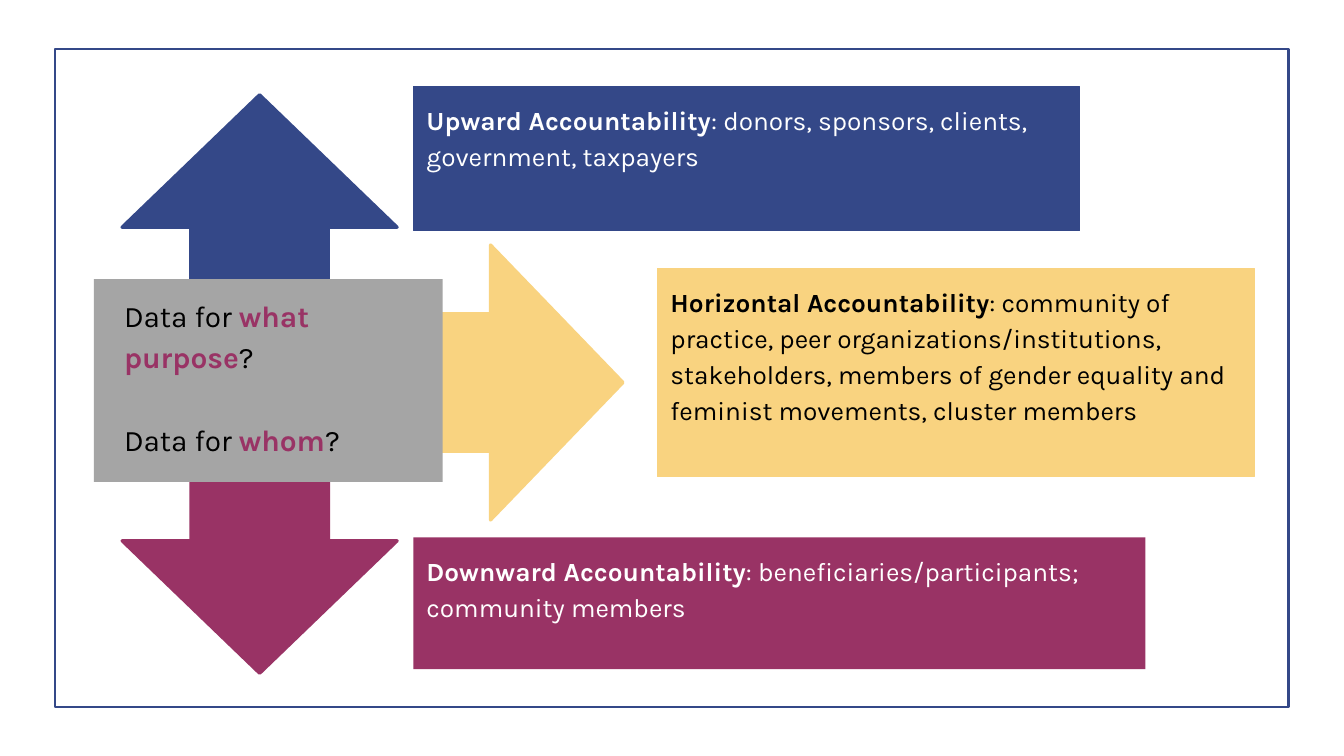
"""Build the slide on upward, horizontal and downward accountability."""
from lxml import etree
from pptx import Presentation
from pptx.dml.color import RGBColor
from pptx.enum import shapes, text
from pptx.oxml import ns
from pptx.util import Inches, Pt

BLUE = RGBColor(0x34, 0x48, 0x88)
YELLOW = RGBColor(0xF9, 0xD3, 0x80)
PLUM = RGBColor(0x99, 0x33, 0x65)
GREY = RGBColor(0xA5, 0xA5, 0xA5)
WHITE = RGBColor(0xFF, 0xFF, 0xFF)
BLACK = RGBColor(0, 0, 0)

FONT = "Karla"
ARROW_SIZE = (2.73, 2.63)
FRAME = (0.55, 0.49, 12.23, 6.52)
QUESTION_BOX = (0.93, 2.77, 3.46, 2.01)

DIRECTIONS = [
    {"name": "Upward Accountability",
     "audience": ": donors, sponsors, clients, government, taxpayers",
     "box": (4.1, 0.86, 6.61, 1.43), "edge": 0.75, "fill": BLUE, "ink": WHITE,
     "arrow_at": (1.21, 0.94), "turn": 0},
    {"name": "Horizontal Accountability",
     "audience": ": community of practice, peer organizations/institutions, "
                 "stakeholders, members of gender equality and feminist "
                 "movements, cluster members",
     "box": (6.52, 2.66, 5.92, 2.07), "edge": 0.75, "fill": YELLOW, "ink": BLACK,
     "arrow_at": (3.5, 2.48), "turn": 90},
    {"name": "Downward Accountability",
     "audience": ": beneficiaries/participants; community members",
     "box": (4.1, 5.33, 7.26, 1.31), "edge": 0, "fill": PLUM, "ink": WHITE,
     "arrow_at": (1.21, 4.05), "turn": 180},
]
QUESTIONS = [("Data for ", "what purpose", "?"), ("Data for ", "whom", "?")]

FRAME_FORMAT = {
    "word_wrap": True,
    "auto_size": text.MSO_AUTO_SIZE.NONE,
    "vertical_anchor": text.MSO_ANCHOR.TOP,
    **{f"margin_{side}": Inches(0.13) for side in ("left", "top", "right", "bottom")},
}


def apply(target, values):
    for key, value in values.items():
        setattr(target, key, value)


def add_block(slide, kind, place, fill=None, edge_color=None, edge=0):
    block = slide.shapes.add_shape(kind, *map(Inches, place))
    block.shadow.inherit = False
    if fill is None:
        block.fill.background()
    else:
        block.fill.solid()
        block.fill.fore_color.rgb = fill
    if edge:
        block.line.color.rgb = edge_color
        block.line.width = Pt(edge)
    else:
        block.line.fill.background()
    return block


def write(paragraph, runs, size, before, after):
    apply(paragraph, {"alignment": text.PP_ALIGN.LEFT, "line_spacing": 1.15,
                      "space_before": Pt(before), "space_after": Pt(after)})
    for words, color, bold in runs:
        run = paragraph.add_run()
        run.text = words
        apply(run.font, {"name": FONT, "size": Pt(size), "bold": bold})
        run.font.color.rgb = color


def add_directions(slide):
    for way in DIRECTIONS:
        box = add_block(slide, shapes.MSO_SHAPE.RECTANGLE, way["box"],
                        way["fill"], way["fill"], way["edge"])
        apply(box.text_frame, FRAME_FORMAT)
        runs = [(way["name"], way["ink"], True), (way["audience"], way["ink"], False)]
        write(box.text_frame.paragraphs[0], runs, 18.7, 16, 16)
    for way in DIRECTIONS:
        arrow = add_block(slide, shapes.MSO_SHAPE.UP_ARROW,
                          way["arrow_at"] + ARROW_SIZE, way["fill"], way["fill"], 2.25)
        arrow.rotation = way["turn"]


def fill_questions(slide, questions):
    slide.shapes._spTree.append(questions._element)
    apply(questions, dict(zip(("left", "top", "width", "height"),
                              map(Inches, QUESTION_BOX))))
    questions.fill.solid()
    questions.fill.fore_color.rgb = GREY
    frame = questions.text_frame
    apply(frame, FRAME_FORMAT)
    for number, (lead, key, mark) in enumerate(QUESTIONS):
        paragraph = frame.add_paragraph() if number else frame.paragraphs[0]
        runs = [(lead, BLACK, False), (key, PLUM, True), (mark, BLACK, False)]
        write(paragraph, runs, 21.3, 29.5 * number, 0)
        properties = paragraph._p.get_or_add_pPr()
        properties.set("marL", str(Inches(0.17)))
        properties.set("indent", "0")
        etree.SubElement(properties, ns.qn("a:buNone"))


def main():
    deck = Presentation()
    deck.slide_width, deck.slide_height = Inches(13.33), Inches(7.5)
    slide = deck.slides.add_slide(deck.slide_layouts[1])
    title, questions = slide.placeholders
    title._element.getparent().remove(title._element)
    add_directions(slide)
    add_block(slide, shapes.MSO_SHAPE.RECTANGLE, FRAME, edge_color=BLUE, edge=1.5)
    fill_questions(slide, questions)
    deck.save("out.pptx")


if __name__ == "__main__":
    main()
